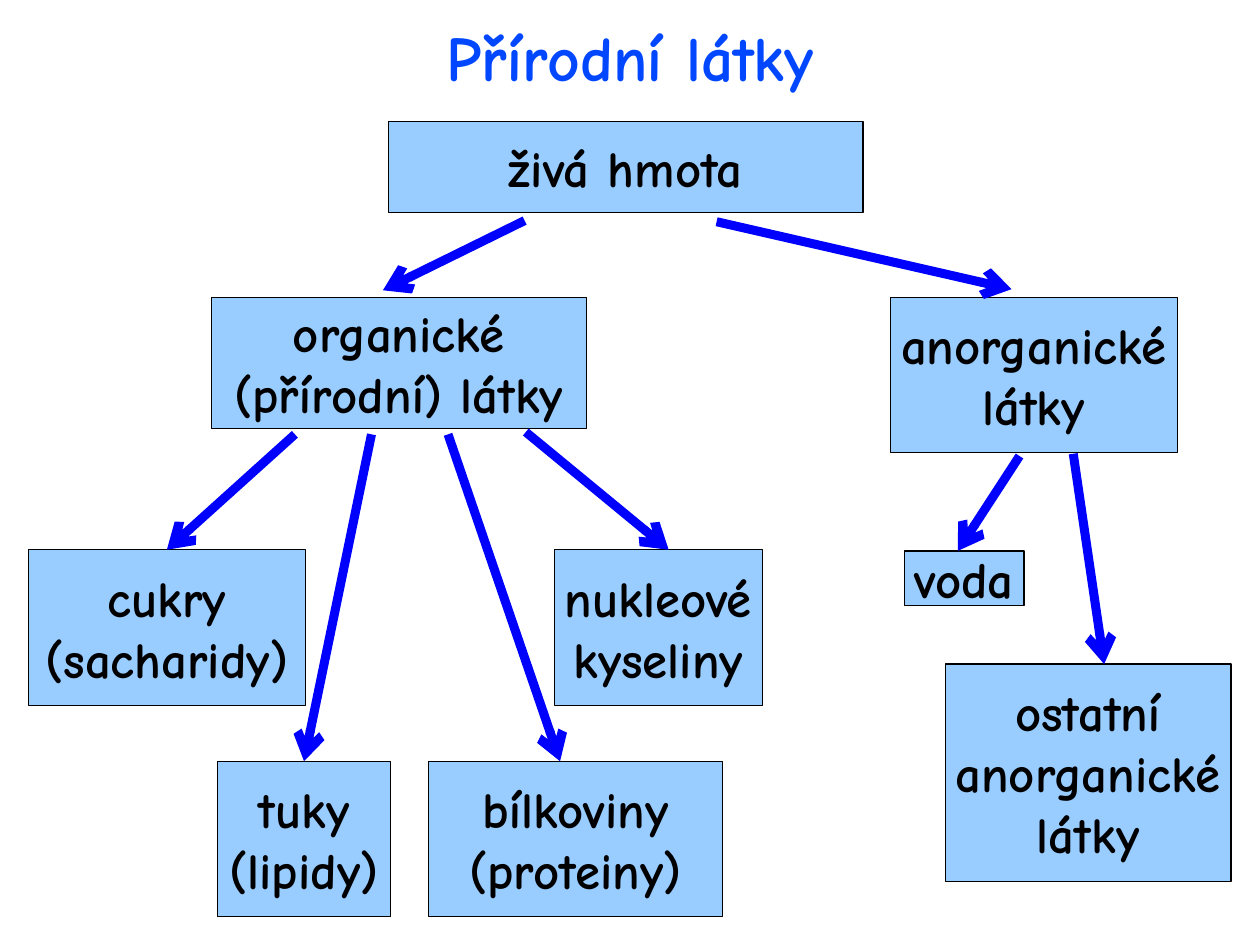
from dataclasses import dataclass

from lxml.etree import SubElement
from pptx import Presentation
from pptx.dml.color import RGBColor as RGB
from pptx.enum.shapes import MSO_CONNECTOR as LINK, MSO_SHAPE as SHAPE
from pptx.enum.text import MSO_ANCHOR as ANCHOR, MSO_AUTO_SIZE as FIT, PP_ALIGN as ALIGN
from pptx.oxml.ns import qn
from pptx.util import Inches, Pt


@dataclass(frozen=True)
class Theme:
    font: str = "Comic Neue"
    head: RGB = RGB(0x00, 0x47, 0xFF)
    fill: RGB = RGB(0x99, 0xCC, 0xFF)
    ink: RGB = RGB(0, 0, 0)
    arrow: RGB = RGB(0, 0, 0xFF)
    big: Pt = Pt(40)
    text: Pt = Pt(32)
    edge: Pt = Pt(0)
    stroke: Pt = Pt(5.67)


theme = Theme()


def write(shape, lines, size, color, anchor):
    """Fill a shape with centred bold paragraphs, one per line."""
    frame = shape.text_frame
    frame.auto_size = FIT.NONE
    frame.word_wrap = False
    frame.vertical_anchor = anchor
    frame.margin_left = frame.margin_right = Inches(0.1)
    frame.margin_top = frame.margin_bottom = Inches(0.05)
    for i, line in enumerate(lines):
        para = frame.add_paragraph() if i else frame.paragraphs[0]
        para.alignment = ALIGN.CENTER
        run = para.add_run()
        run.text = line
        run.font.name = theme.font
        run.font.size = size
        run.font.bold = True
        run.font.color.rgb = color


# The page is 28 by 21 cm
deck = Presentation()
deck.slide_width = Inches(28 / 2.54)
deck.slide_height = Inches(21 / 2.54)
slide = deck.slides.add_slide(deck.slide_layouts[5])

title = slide.shapes.title
title.left, title.top = Inches(1.03), Inches(0.11)
title.width, title.height = Inches(8.97), Inches(0.87)
write(title, ["Přírodní látky"], theme.big, theme.head, ANCHOR.TOP)

# Tops of the rows, and the height of a two-line box
row2, row3, row4, tall = 2.6, 4.81, 6.66, 1.36

nodes = {
    "matter": (3.4, 1.06, 4.15, 0.8, ["živá hmota"]),
    "organic": (1.85, row2, 3.28, 1.15, ["organické", "(přírodní) látky"]),
    "mineral": (7.79, row2, 2.51, tall, ["anorganické", "látky"]),
    "sugars": (0.25, row3, 2.42, tall, ["cukry", "(sacharidy)"]),
    "nucleic": (4.85, row3, 1.82, tall, ["nukleové", "kyseliny"]),
    "water": (7.91, 4.82, 1.05, 0.48, ["voda"]),
    "fats": (1.9, row4, 1.52, tall, ["tuky", "(lipidy)"]),
    "proteins": (3.75, row4, 2.57, tall, ["bílkoviny", "(proteiny)"]),
    "others": (8.27, 5.81, 2.5, 1.9, ["ostatní", "anorganické", "látky"]),
}
boxes = {}
for name, (*place, lines) in nodes.items():
    box = slide.shapes.add_shape(SHAPE.RECTANGLE, *map(Inches, place))
    box.shadow.inherit = False
    box.fill.solid()
    box.fill.fore_color.rgb = theme.fill
    box.line.color.rgb = theme.ink
    box.line.width = theme.edge
    write(box, lines, theme.text, theme.ink, ANCHOR.MIDDLE)
    boxes[name] = box

# Start, end, and the box whose top middle the arrow meets
arrows = [
    (4.59, 1.93, 3.35, 2.54, None),
    (6.27, 1.94, 8.85, 2.53, None),
    (2.58, 3.8, 1.44, row3, "sugars"),
    (3.25, 3.8, 2.68, row4, "fats"),
    (3.92, 3.8, 4.9, row4, None),
    (4.6, 3.78, 5.85, row3, None),
    (8.92, 3.99, 8.38, 4.82, None),
    (9.39, 3.97, 9.66, 5.81, None),
]
for *ends, goal in arrows:
    arrow = slide.shapes.add_connector(LINK.STRAIGHT, *map(Inches, ends))
    if goal:
        arrow.end_connect(boxes[goal], 0)
    arrow.line.color.rgb = theme.arrow
    arrow.line.width = theme.stroke
    SubElement(arrow.line._get_or_add_ln(), qn("a:tailEnd"), type="arrow")
    SubElement(arrow._element.spPr, qn("a:effectLst"))

deck.save("out.pptx")
